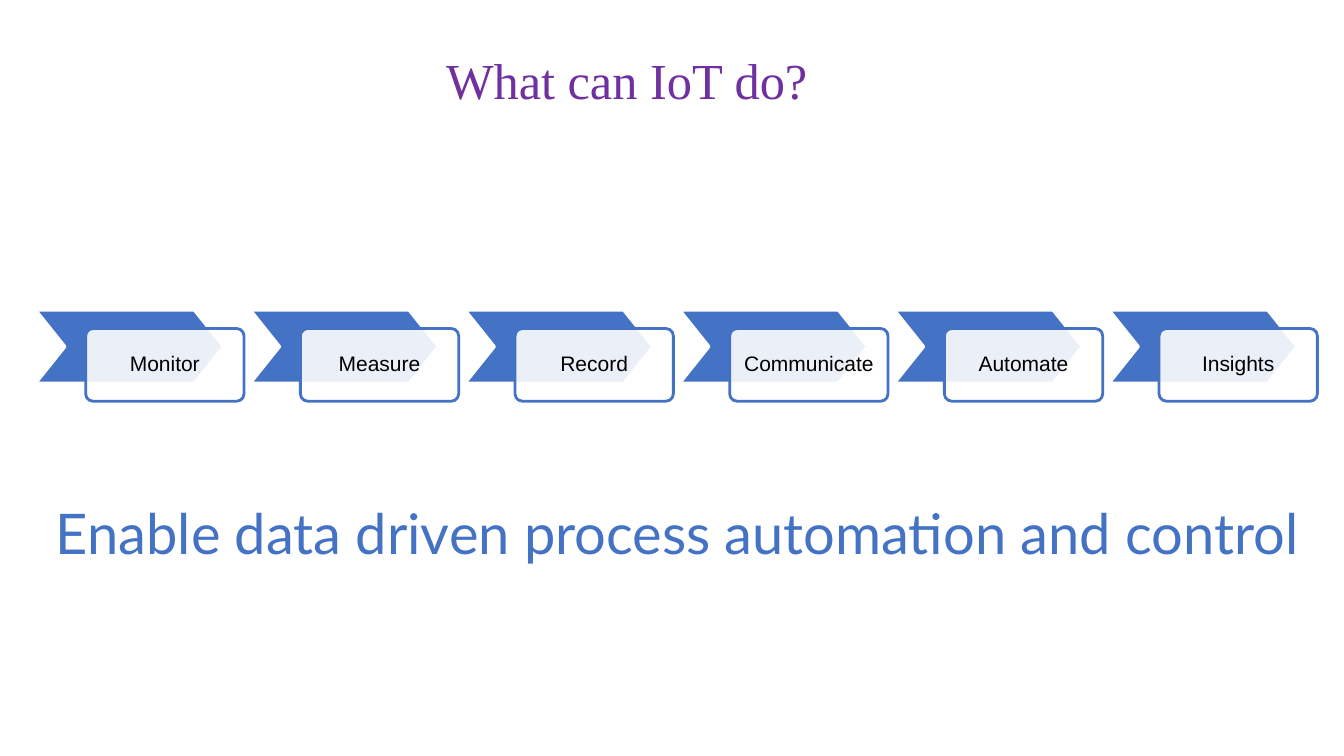
from lxml.etree import SubElement
from pptx import Presentation
from pptx.dml.color import RGBColor
from pptx.enum.shapes import MSO_SHAPE as Shape
from pptx.enum.text import MSO_ANCHOR as Anchor, PP_ALIGN as Align
from pptx.oxml.ns import qn
from pptx.util import Cm, Pt

COLORS = {"blue": "4472C4", "purple": "7030A0", "white": "FFFFFF", "black": "000000"}
STEPS = ["Monitor", "Measure", "Record", "Communicate", "Automate", "Insights"]
STEP_LEFT, STEP_PITCH = 0.91, 5.41
CARD_OFFSET = 1.25


def color(name):
    return RGBColor.from_string(COLORS[name])


class SlideBuilder:
    def __init__(self, slide):
        self.slide = slide
        self.process = slide.shapes.add_group_shape()

    def set_text(self, shape, text, size, font, ink, margins):
        frame = shape.text_frame
        frame_format = {
            "word_wrap": True,
            "vertical_anchor": Anchor.MIDDLE,
            "margin_left": Cm(margins[0]),
            "margin_right": Cm(margins[0]),
            "margin_top": Cm(margins[1]),
            "margin_bottom": Cm(margins[1]),
        }
        for name, value in frame_format.items():
            setattr(frame, name, value)
        paragraph = frame.paragraphs[0]
        paragraph.text = text
        paragraph.alignment = Align.CENTER
        paragraph.line_spacing = 0.9
        for name, value in {"size": Pt(size), "name": font}.items():
            setattr(paragraph.font, name, value)
        paragraph.font.color.rgb = color(ink)

    def heading(self, box, text, size, font, ink):
        shape = self.slide.shapes.add_textbox(*map(Cm, box))
        self.set_text(shape, text, size, font, ink, (0.25, 0.13))

    def block(self, kind, box, adjustment, fill, line):
        shape = self.process.shapes.add_shape(kind, *map(Cm, box))
        shape.shadow.inherit = False
        shape.adjustments[0] = adjustment
        shape.fill.solid()
        shape.fill.fore_color.rgb = color(fill)
        shape.line.color.rgb = color(line)
        shape.line.width = Pt(2)
        return shape

    def step(self, left, label):
        self.block(Shape.CHEVRON, (left, 7.82, 4.72, 1.83), 0.4, "blue", "white")
        card_box = (left + CARD_OFFSET, 8.28, 3.99, 1.83)
        card = self.block(Shape.ROUNDED_RECTANGLE, card_box, 0.1, "white", "blue")
        fill_color = card.element.spPr.find(qn("a:solidFill"))[0]
        SubElement(fill_color, qn("a:alpha"), val="89000")
        self.set_text(card, label, 15, "Arial", "black", (0.25, 0.3))


def main():
    presentation = Presentation()
    presentation.slide_width = Cm(33.87)
    presentation.slide_height = Cm(19.05)
    slide = presentation.slides.add_slide(presentation.slide_layouts[6])
    builder = SlideBuilder(slide)
    for index, label in enumerate(STEPS):
        builder.step(STEP_LEFT + index * STEP_PITCH, label)
    builder.heading((1.35, 1.09, 29.21, 2.01), "What can IoT do? ", 36, "Times New Roman", "purple")
    builder.heading((0.1, 12.5, 33.93, 2.01), "Enable data driven process automation and control", 40, "Lato", "blue")
    presentation.save("out.pptx")


if __name__ == "__main__":
    main()
